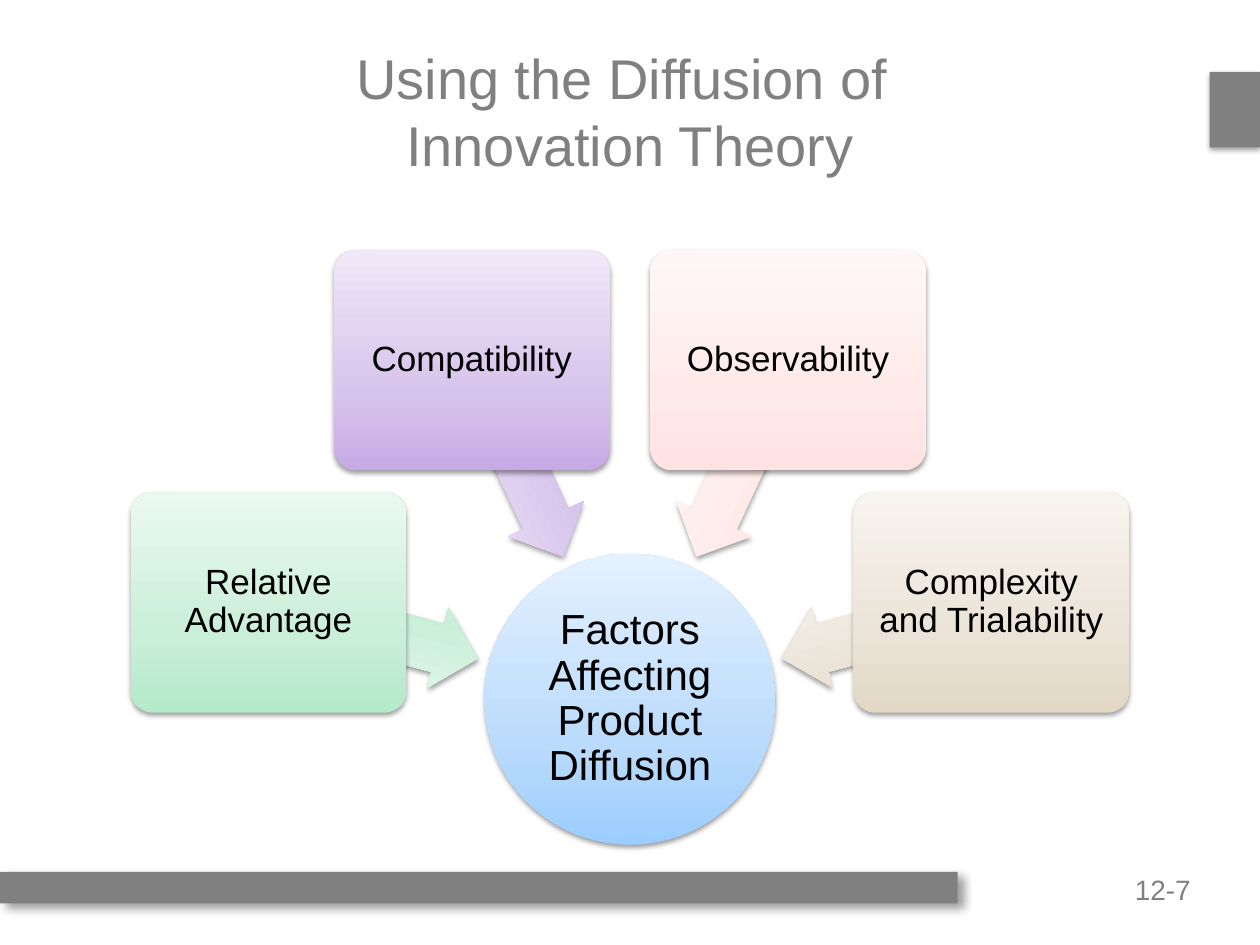
from dataclasses import dataclass
from math import cos, radians, sin

from lxml.etree import SubElement
from pptx import Presentation
from pptx.dml.color import RGBColor
from pptx.enum.shapes import MSO_SHAPE as Preset
from pptx.enum.text import MSO_ANCHOR as Anchor, PP_ALIGN as Align
from pptx.oxml.ns import qn
from pptx.util import Inches, Pt

GRAY = "808080"
BLACK = "000000"
HUB_X, HUB_Y, HUB_SIZE = 5, 5.55, 2.31
BOX_ORBIT, BOX_WIDTH, BOX_HEIGHT = 2.97, 2.19, 1.75
ARROW_ORBIT, ARROW_LENGTH, ARROW_HEIGHT = 2.11, 1.72, 0.66
STOP_POSITIONS = (0, 35, 100)


@dataclass(frozen=True)
class Shadow:
    opacity: int
    blur: float
    distance: float
    angle: int


@dataclass(frozen=True)
class Factor:
    label: str
    angle: int
    shades: tuple[str, str, str]


@dataclass(frozen=True)
class Bar:
    left: float
    top: float
    width: float
    height: float
    shadow: Shadow


SOFT = Shadow(38, 3.1, 1.6, 90)
HUB_SHADES = ("9CCDFD", "BBDBFC", "E4F1FF")
FACTORS = (
    Factor("Relative Advantage", 15, ("B4E9C9", "CAEFD8", "EAF9F0")),
    Factor("Compatibility", 65, ("C7AAE5", "D7C4EC", "F0E8F8")),
    Factor("Observability", 115, ("FFE2E2", "FFEAEA", "FFF7F7")),
    Factor("Complexity and Trialability", 165, ("E3D8C6", "EBE3D7", "F8F4EF")),
)
BARS = (
    Bar(9.6, 0.57, 0.4, 0.6, Shadow(35, 3.1, 1.8, 90)),
    Bar(0, 6.92, 7.6, 0.25, Shadow(38, 5, 4, 45)),
)


def color(code: str) -> RGBColor:
    return RGBColor.from_string(code)


def write(shape, text: str, *, size: float, shade: str = BLACK,
          align=Align.CENTER, anchor=Anchor.MIDDLE,
          margins=(0.1, 0.05), spacing: float = 1.0) -> None:
    frame = shape.text_frame
    frame.word_wrap = True
    frame.vertical_anchor = anchor
    frame.margin_left = frame.margin_right = Inches(margins[0])
    frame.margin_top = frame.margin_bottom = Inches(margins[1])
    frame.text = text
    paragraph = frame.paragraphs[0]
    paragraph.alignment = align
    paragraph.line_spacing = spacing
    for run in paragraph.runs:
        run.font.name = "Arial"
        run.font.size = Pt(size)
        run.font.color.rgb = color(shade)


def cast_shadow(shape, shadow: Shadow) -> None:
    shape.shadow.inherit = False
    effects = shape._element.spPr.find(qn("a:effectLst"))
    outer = SubElement(effects, qn("a:outerShdw"), blurRad=str(Pt(shadow.blur)),
                       dist=str(Pt(shadow.distance)), dir=str(shadow.angle * 60000),
                       algn="ctr", rotWithShape="0")
    tint = SubElement(outer, qn("a:srgbClr"), val=BLACK)
    SubElement(tint, qn("a:alpha"), val=str(shadow.opacity * 1000))


def fill_gradient(shape, shades: tuple[str, str, str]) -> None:
    shape.fill.gradient()
    shape.fill.gradient_angle = 90
    stops = shape._element.spPr.find(qn("a:gradFill")).find(qn("a:gsLst"))
    stops.clear()
    for position, shade in zip(STOP_POSITIONS, shades):
        stop = SubElement(stops, qn("a:gs"), pos=str(position * 1000))
        SubElement(stop, qn("a:srgbClr"), val=shade)


def add_centered(slide, preset, x: float, y: float, width: float, height: float,
                 shades: tuple[str, str, str]):
    shape = slide.shapes.add_shape(preset, Inches(x - width / 2), Inches(y - height / 2),
                                   Inches(width), Inches(height))
    fill_gradient(shape, shades)
    shape.line.fill.background()
    cast_shadow(shape, SOFT)
    return shape


def add_bar(slide, bar: Bar) -> None:
    shape = slide.shapes.add_shape(Preset.RECTANGLE, Inches(bar.left), Inches(bar.top),
                                   Inches(bar.width), Inches(bar.height))
    shape.fill.solid()
    shape.fill.fore_color.rgb = color(GRAY)
    shape.line.fill.background()
    cast_shadow(shape, bar.shadow)


def orbit(radius: float, angle: int) -> tuple[float, float]:
    turn = radians(angle)
    return HUB_X - radius * cos(turn), HUB_Y - radius * sin(turn)


def add_factor(slide, factor: Factor) -> None:
    arrow = add_centered(slide, Preset.LEFT_ARROW, *orbit(ARROW_ORBIT, factor.angle),
                         ARROW_LENGTH, ARROW_HEIGHT, factor.shades)
    arrow.rotation = 180 + factor.angle
    arrow.adjustments[0] = 0.6
    arrow.adjustments[1] = 0.5
    box = add_centered(slide, Preset.ROUNDED_RECTANGLE, *orbit(BOX_ORBIT, factor.angle),
                       BOX_WIDTH, BOX_HEIGHT, factor.shades)
    box.adjustments[0] = 0.1
    write(box, factor.label, size=20, margins=(0.09, 0.09), spacing=0.9)


def main() -> None:
    """Build the slide on the factors that affect product diffusion."""
    deck = Presentation()
    deck.slide_width, deck.slide_height = Inches(10), Inches(7.5)
    slide = deck.slides.add_slide(deck.slide_layouts[6])

    page_number = slide.shapes.add_textbox(Inches(7.5), Inches(6.92), Inches(1.95), Inches(0.25))
    write(page_number, "12-7", size=16, shade=GRAY, align=Align.RIGHT,
          anchor=Anchor.TOP, margins=(0, 0), spacing=1.02)
    for bar in BARS:
        add_bar(slide, bar)

    title = slide.shapes.add_textbox(Inches(0.6), Inches(0.25), Inches(8.8), Inches(1.25))
    write(title, "Using the Diffusion of \vInnovation Theory", size=32, shade=GRAY)

    hub = add_centered(slide, Preset.OVAL, HUB_X, HUB_Y, HUB_SIZE, HUB_SIZE, HUB_SHADES)
    write(hub, "Factors Affecting Product Diffusion", size=24, margins=(0.02, 0.02), spacing=0.9)
    for factor in FACTORS:
        add_factor(slide, factor)

    deck.save("out.pptx")


if __name__ == "__main__":
    main()
